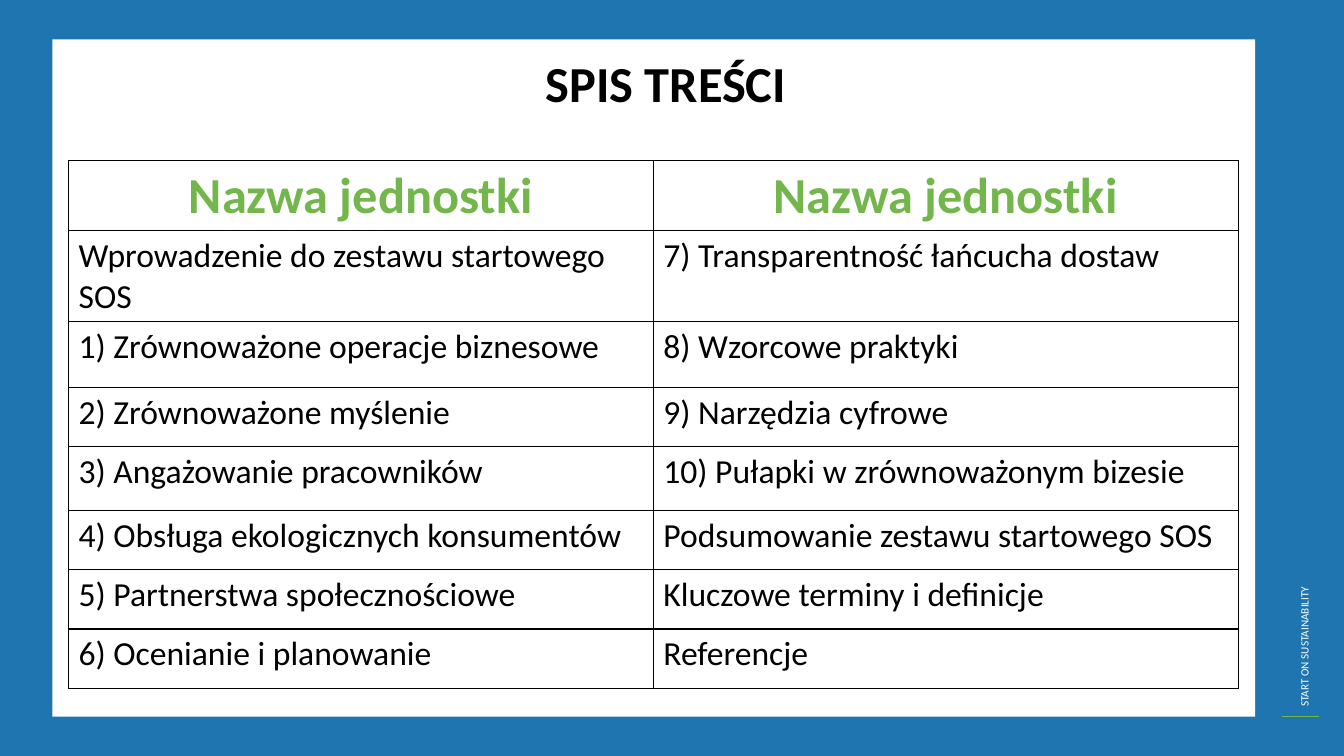
from lxml import etree
from pptx import Presentation
from pptx.dml.color import RGBColor
from pptx.enum import shapes, text
from pptx.oxml import ns
from pptx.util import Inches, Pt

BLUE = RGBColor(0x1E, 0x75, 0xB0)
GREEN = RGBColor(0x73, 0xB6, 0x4B)
WHITE = RGBColor(0xFF, 0xFF, 0xFF)
BLACK = RGBColor(0, 0, 0)
INK = RGBColor(1, 1, 1)
FONT = "Calibri"

HEAD = "Nazwa jednostki"
UNITS = [
    (HEAD, HEAD),
    ("Wprowadzenie do zestawu startowego SOS", "7) Transparentność łańcucha dostaw"),
    ("1) Zrównoważone operacje biznesowe", "8) Wzorcowe praktyki"),
    ("2) Zrównoważone myślenie", "9) Narzędzia cyfrowe"),
    ("3) Angażowanie pracowników", "10) Pułapki w zrównoważonym bizesie"),
    ("4) Obsługa ekologicznych konsumentów", "Podsumowanie zestawu startowego SOS"),
    ("5) Partnerstwa społecznościowe", "Kluczowe terminy i definicje"),
    ("6) Ocenianie i planowanie", "Referencje"),
]
ROWS = [0.59, 0.59, 0.65, 0.59, 0.63, 0.59, 0.59, 0.59]


def write(para, words, size, color, bold=False):
    run = para.add_run()
    run.text = words
    font = run.font
    font.name, font.size, font.bold = FONT, Pt(size), bold
    font.color.rgb = color


def panel(slide, box, color):
    rect = slide.shapes.add_shape(shapes.MSO_SHAPE.RECTANGLE, *map(Inches, box))
    rect.shadow.inherit = False
    rect.fill.solid()
    rect.fill.fore_color.rgb = color
    rect.line.fill.background()


def frame(slide, box):
    """Blue surround with a white sheet inside it."""
    left, top, width, height = box
    panel(slide, box, BLUE)
    panel(slide, (left + 0.52, top + 0.39, width - 1.4, height - 0.78), WHITE)


def motto(slide, box):
    """Text that runs up the right margin, over a short green rule."""
    left, top, width, height = box
    label = slide.shapes.add_textbox(
        Inches(left + (width - height) / 2), Inches(top + (height - width) / 2),
        Inches(height), Inches(width))
    label.rotation = 270
    label.text_frame.word_wrap = True
    write(label.text_frame.paragraphs[0], "START ON SUSTAINABILITY", 8, WHITE)
    mid, base = left + width / 2, top + height
    rule = slide.shapes.add_connector(
        shapes.MSO_CONNECTOR.STRAIGHT, Inches(mid - 0.22), Inches(base),
        Inches(mid + 0.14), Inches(base))
    rule.line.color.rgb = GREEN
    rule.line.width = Pt(1)
    etree.SubElement(rule._element.spPr, ns.qn("a:effectLst"))


def title(slide, box):
    body = slide.shapes.add_textbox(*map(Inches, box)).text_frame
    body.word_wrap = True
    para = body.paragraphs[0]
    para.alignment = text.PP_ALIGN.CENTER
    para.line_spacing = 0.9
    para.space_before = Pt(10)
    props = para._p.get_or_add_pPr()
    props.set("marL", str(Inches(0.5)))
    props.set("indent", str(Inches(-0.25)))
    write(para, "SPIS TREŚCI", 36, BLACK, True)


def border(cell):
    props = cell._tc.get_or_add_tcPr()
    for spot, side in enumerate(("lnL", "lnR", "lnT", "lnB")):
        line = etree.Element(ns.qn("a:" + side), w=str(Pt(1)))
        fill = etree.SubElement(line, ns.qn("a:solidFill"))
        etree.SubElement(fill, ns.qn("a:srgbClr"), val=str(BLACK))
        props.insert(spot, line)


def units(slide, box):
    grid = slide.shapes.add_table(len(UNITS), 2, *map(Inches, box)).table
    grid.first_row = grid.horz_banding = False
    for col in grid.columns:
        col.width = Inches(box[2] / 2)
    for r, names in enumerate(UNITS):
        grid.rows[r].height = Inches(ROWS[r])
        for c, name in enumerate(names):
            cell = grid.cell(r, c)
            cell.fill.background()
            border(cell)
            para = cell.text_frame.paragraphs[0]
            if r == 0:
                para.alignment = text.PP_ALIGN.CENTER
                write(para, name, 36, GREEN, True)
            else:
                write(para, name, 24, INK)


def main():
    deck = Presentation()
    deck.slide_width, deck.slide_height = Inches(13.33), Inches(7.5)
    slide = deck.slides.add_slide(deck.slide_layouts[6])
    frame(slide, (0, 0, 13.33, 7.5))
    motto(slide, (12.82, 2.65, 0.24, 4.46))
    title(slide, (1.01, 0.54, 10.94, 0.88))
    units(slide, (0.68, 1.59, 11.6, 5.24))
    deck.save("out.pptx")


if __name__ == "__main__":
    main()
